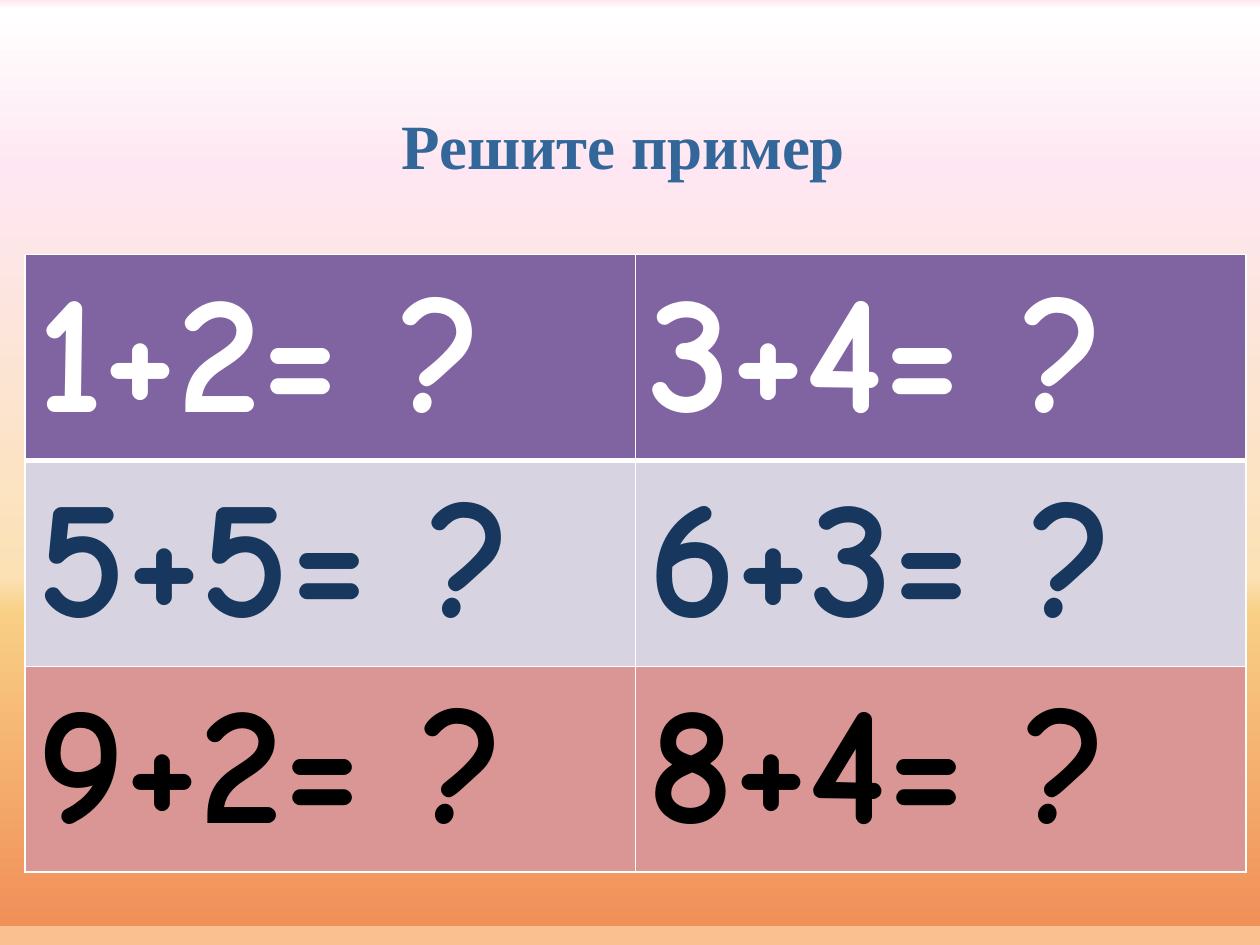
from dataclasses import dataclass

from lxml import etree
from pptx import Presentation
from pptx.dml.color import RGBColor
from pptx.enum.text import MSO_ANCHOR, PP_ALIGN
from pptx.oxml.ns import qn
from pptx.util import Inches, Pt

CENTER = PP_ALIGN.CENTER
MIDDLE = MSO_ANCHOR.MIDDLE


@dataclass(frozen=True)
class Theme:
    title_font: str = "Times New Roman"
    title_size: int = 36
    title_color: str = "336699"
    sum_font: str = "Comic Neue"
    sum_size: int = 96
    grid_color: str = "FFFFFF"
    grid_width: int = 1
    header_rule_width: int = 3
    # (fill, text) for each table row
    row_colors: tuple = (("8064A2", "FFFFFF"), ("D8D3E0", "17375E"), ("D99694", "000000"))
    # (percent, colour) from top to bottom
    sunset: tuple = (
        (0, "FF0000"), (0, "FEE7F2"), (1, "FFFFFF"), (18, "FEE7F2"), (42, "FCE4D0"),
        (50, "FCE3C3"), (61, "FBE1B4"), (65, "F8CF84"), (98, "F18F59"), (98, "FAC090"),
    )


THEME = Theme()
SUMS = (
    ("1+2= ?", "3+4= ?"),
    ("5+5= ?", "6+3= ?"),
    ("9+2= ?", "8+4= ?"),
)


def style_text(paragraph, font_name, size, color):
    for run in paragraph.runs:
        font = run.font
        font.name, font.size, font.bold = font_name, Pt(size), True
        font.color.rgb = RGBColor.from_string(color)


def paint_background(slide):
    fill = slide.background.fill
    fill.gradient()
    fill.gradient_angle = 270
    stops = next(slide.background._cSld.iter(qn("a:gsLst")))
    for stop in list(stops):
        stops.remove(stop)
    for percent, color in THEME.sunset:
        stop = etree.SubElement(stops, qn("a:gs"), pos=str(percent * 1000))
        etree.SubElement(stop, qn("a:srgbClr"), val=color)


def add_heading(slide, left, top, width, height):
    heading = slide.shapes.add_textbox(left, top, width, height).text_frame
    heading.word_wrap = True
    heading.vertical_anchor = MIDDLE
    heading.margin_right = Inches(0.38)
    heading.text = "Решите пример"
    paragraph = heading.paragraphs[0]
    paragraph.alignment = CENTER
    style_text(paragraph, THEME.title_font, THEME.title_size, THEME.title_color)


def set_borders(cell, top_width, bottom_width):
    """Draw all four sides; must run before the cell is filled."""
    properties = cell._tc.get_or_add_tcPr()
    side_width = THEME.grid_width
    widths = {"L": side_width, "R": side_width, "T": top_width, "B": bottom_width}
    for side, width in widths.items():
        line = etree.SubElement(properties, qn(f"a:ln{side}"), w=str(Pt(width)))
        solid = etree.SubElement(line, qn("a:solidFill"))
        etree.SubElement(solid, qn("a:srgbClr"), val=THEME.grid_color)


def add_sums_table(slide, left, top, width, height):
    row_count, column_count = len(SUMS), len(SUMS[0])
    table = slide.shapes.add_table(row_count, column_count, left, top, width, height).table
    thin, thick = THEME.grid_width, THEME.header_rule_width
    for row, (sums, colors) in enumerate(zip(SUMS, THEME.row_colors)):
        fill_color, text_color = colors
        for column, expression in enumerate(sums):
            cell = table.cell(row, column)
            set_borders(cell, thick if row == 1 else thin, thick if row == 0 else thin)
            cell.fill.solid()
            cell.fill.fore_color.rgb = RGBColor.from_string(fill_color)
            cell.text_frame.text = expression
            style_text(cell.text_frame.paragraphs[0], THEME.sum_font, THEME.sum_size, text_color)


def main():
    presentation = Presentation()
    presentation.slide_width, presentation.slide_height = Inches(10), Inches(7.5)
    slide = presentation.slides.add_slide(presentation.slide_layouts[6])
    paint_background(slide)
    add_sums_table(slide, Inches(0.2), Inches(2.02), Inches(9.69), Inches(4.9))
    add_heading(slide, Inches(0.59), Inches(0.52), Inches(9), Inches(1.25))
    presentation.save("out.pptx")


if __name__ == "__main__":
    main()
